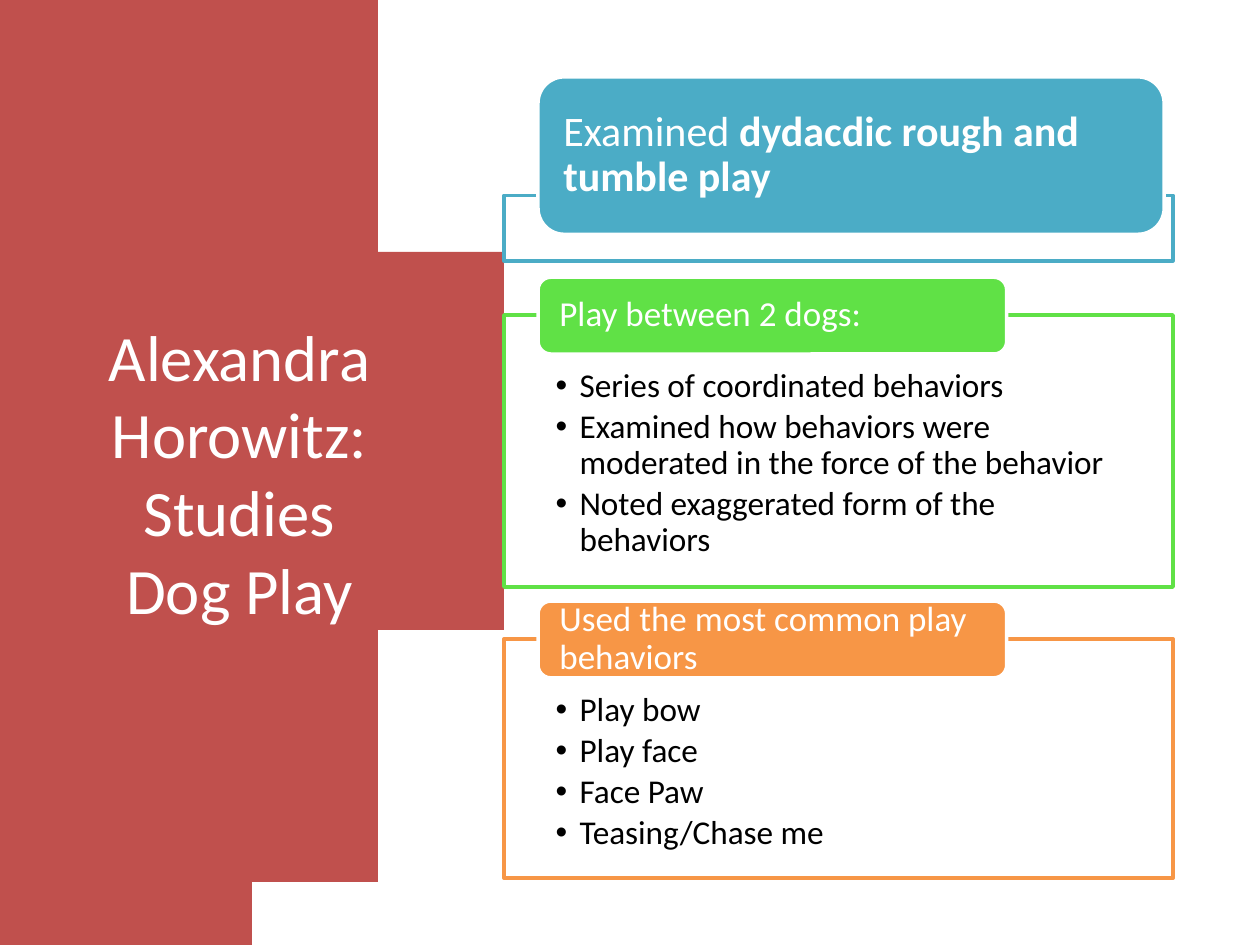
from dataclasses import dataclass

from lxml import etree
from pptx import Presentation
from pptx.dml.color import RGBColor
from pptx.enum import shapes, text
from pptx.oxml.ns import qn
from pptx.util import Inches, Pt


@dataclass(frozen=True)
class Theme:
    font: str = "Calibri"
    white: str = "FFFFFF"
    black: str = "000000"
    red: str = "C0504D"
    blue: str = "4BACC6"
    green: str = "60E146"
    orange: str = "F79646"
    title_size: int = 37
    lead_size: int = 24
    tab_size: int = 20
    list_size: int = 19
    line_width: int = 2


THEME = Theme()
FRAME_LEFT, FRAME_WIDTH = 4, 5.31
TAB_LEFT = 4.27
TWO_CONTENT = 3

PLAY_POINTS = [
    "Series of coordinated behaviors",
    "Examined how behaviors were moderated in the force of the behavior",
    "Noted exaggerated form of the behaviors",
]
BEHAVIORS = ["Play bow", "Play face", "Face Paw", "Teasing/Chase me"]


def rgb(color):
    return RGBColor.from_string(color)


def place(shape, left, top, width, height):
    shape.left, shape.top = Inches(left), Inches(top)
    shape.width, shape.height = Inches(width), Inches(height)


def paint(shape, fill, line):
    shape.fill.solid()
    shape.fill.fore_color.rgb = rgb(fill)
    shape.line.color.rgb = rgb(line)
    shape.line.width = Pt(THEME.line_width)


def set_up_text(shape, anchor, left, top, right, bottom):
    frame = shape.text_frame
    frame.word_wrap = True
    frame.auto_size = text.MSO_AUTO_SIZE.NONE
    frame.vertical_anchor = anchor
    frame.margin_left, frame.margin_top = Inches(left), Inches(top)
    frame.margin_right, frame.margin_bottom = Inches(right), Inches(bottom)
    return frame


def add_run(paragraph, wording, size, color, bold=False):
    run = paragraph.add_run()
    run.text = wording
    run.font.name = THEME.font
    run.font.size = Pt(size)
    run.font.color.rgb = rgb(color)
    run.font.bold = bold


def curve(start, control_1, control_2, end, steps=40):
    """Points along a cubic Bezier curve, without its start."""
    points = []
    for step in range(1, steps + 1):
        t = step / steps
        weights = ((1 - t) ** 3, 3 * t * (1 - t) ** 2, 3 * t * t * (1 - t), t ** 3)
        points.append(tuple(
            sum(w * value for w, value in zip(weights, values))
            for values in zip(start, control_1, control_2, end)))
    return points


def add_side_panel(slide):
    """Draw the bulging panel behind the title."""
    upper = [(2.12, 0)] + curve((2.12, 0), (3.07, 0.77), (3.7, 2.16), (3.7, 3.75))
    lower = [(x, 7.5 - y) for x, y in reversed(upper[:-1])]
    builder = slide.shapes.build_freeform(0, 0, scale=Inches(1))
    builder.add_line_segments(upper + lower + [(0, 7.5)], close=True)
    panel = builder.convert_to_shape()
    panel.shadow.inherit = False
    panel.fill.solid()
    panel.fill.fore_color.rgb = rgb(THEME.red)
    panel.line.fill.background()
    slide.shapes.title.element.addprevious(panel.element)


def fill_title(title, wording):
    place(title, 0.69, 0.7, 2.42, 6.09)
    frame = set_up_text(title, text.MSO_ANCHOR.MIDDLE, 0.1, 0.05, 0.1, 0.05)
    paragraph = frame.paragraphs[0]
    paragraph.alignment = text.PP_ALIGN.CENTER
    add_run(paragraph, wording, THEME.title_size, THEME.white)


def style_frame(frame, top, height, color):
    place(frame, FRAME_LEFT, top, FRAME_WIDTH, height)
    paint(frame, THEME.white, color)
    white = frame.element.spPr.find(qn("a:solidFill"))[0]
    etree.SubElement(white, qn("a:alpha"), val="90000")


def add_empty_frame(slide, top, height, color):
    frame = slide.shapes.add_shape(shapes.MSO_SHAPE.RECTANGLE, 0, 0, 0, 0)
    frame.shadow.inherit = False
    style_frame(frame, top, height, color)


def fill_list(body, top, height, color, items):
    style_frame(body, top, height, color)
    frame = set_up_text(body, text.MSO_ANCHOR.TOP, 0.41, 0.43, 0.41, 0.15)
    for index, item in enumerate(items):
        paragraph = frame.add_paragraph() if index else frame.paragraphs[0]
        paragraph.level = 1
        paragraph.line_spacing = 0.9
        paragraph.space_before = Pt(0)
        paragraph.space_after = Pt(0.15 * THEME.list_size)
        add_run(paragraph, item, THEME.list_size, THEME.black)
        properties = paragraph._p.get_or_add_pPr()
        properties.set("marL", str(Inches(0.19)))
        properties.set("indent", str(-Inches(0.19)))
        etree.SubElement(properties, qn("a:buChar"), char="•")


def add_tab(slide, top, width, height, color, size, runs):
    """Add a rounded heading; runs are (wording, bold) pairs."""
    tab = slide.shapes.add_shape(
        shapes.MSO_SHAPE.ROUNDED_RECTANGLE,
        Inches(TAB_LEFT), Inches(top), Inches(width), Inches(height))
    tab.shadow.inherit = False
    paint(tab, color, THEME.white)
    frame = set_up_text(tab, text.MSO_ANCHOR.MIDDLE, 0.14, 0, 0.14, 0)
    paragraph = frame.paragraphs[0]
    paragraph.alignment = text.PP_ALIGN.LEFT
    paragraph.line_spacing = 0.9
    for wording, bold in runs:
        add_run(paragraph, wording, size, THEME.white, bold)


def main():
    deck = Presentation()
    deck.slide_width, deck.slide_height = Inches(10), Inches(7.5)
    slide = deck.slides.add_slide(deck.slide_layouts[TWO_CONTENT])
    title, play_list, behavior_list = slide.placeholders

    add_side_panel(slide)
    fill_title(title, "Alexandra Horowitz: Studies Dog Play")

    add_empty_frame(slide, 1.55, 0.52, THEME.blue)
    add_tab(slide, 0.61, 4.97, 1.25, THEME.blue, THEME.lead_size,
            [("Examined ", False), ("dydacdic rough and tumble play", True)])

    sections = [
        (play_list, 2.5, 2.16, THEME.green, "Play between 2 dogs:", PLAY_POINTS),
        (behavior_list, 5.07, 1.9, THEME.orange,
         "Used the most common play behaviors", BEHAVIORS),
    ]
    for body, top, height, color, heading, items in sections:
        fill_list(body, top, height, color, items)
        add_tab(slide, top - 0.3, 3.72, 0.61, color, THEME.tab_size,
                [(heading, False)])

    deck.save("out.pptx")


if __name__ == "__main__":
    main()
